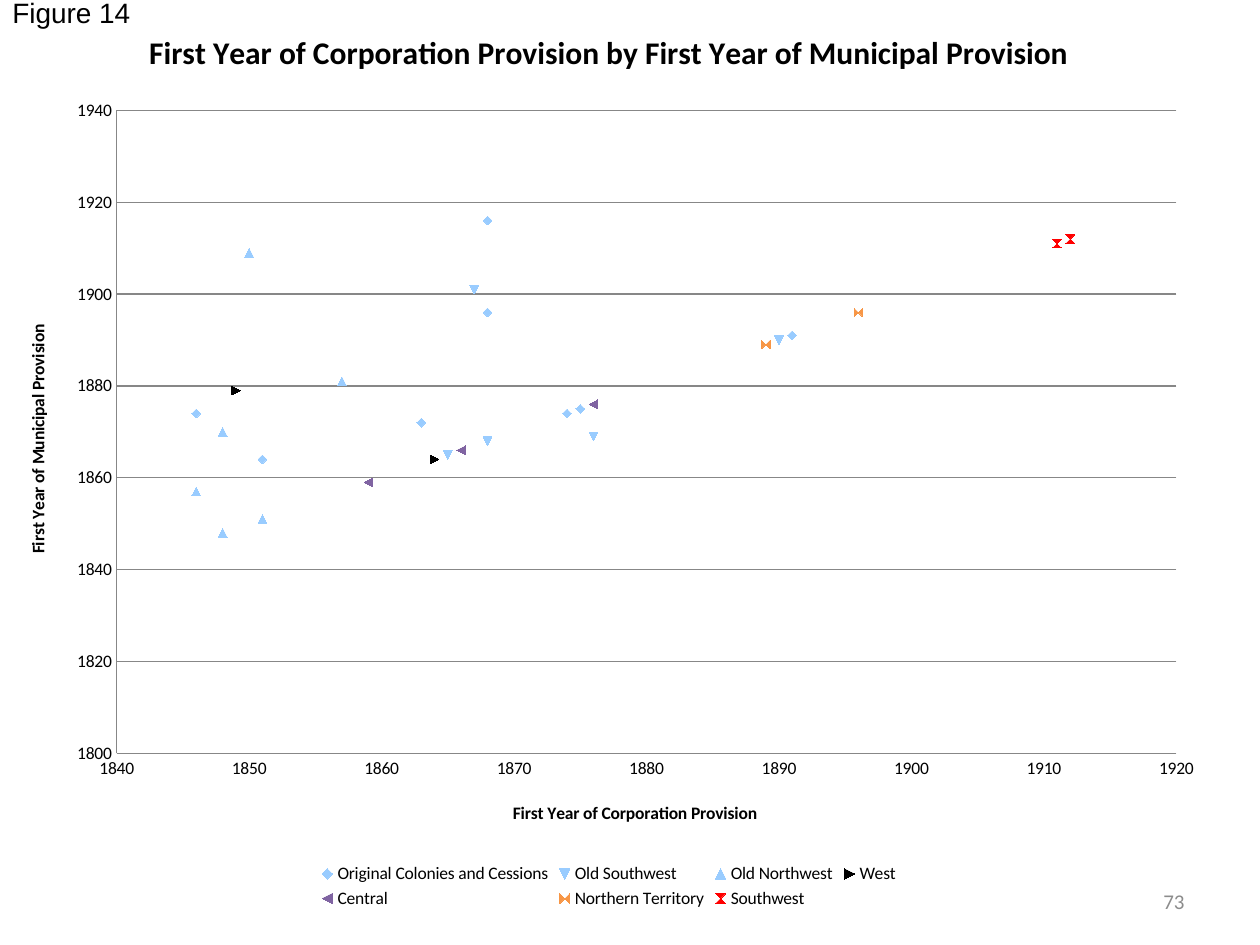
from dataclasses import dataclass
from typing import Any

from lxml.etree import SubElement
from pptx import Presentation
from pptx.chart.data import XyChartData
from pptx.dml.color import RGBColor
from pptx.enum.chart import (XL_CHART_TYPE, XL_LEGEND_POSITION,
                             XL_MARKER_STYLE, XL_TICK_MARK)
from pptx.enum.text import MSO_ANCHOR, PP_ALIGN
from pptx.oxml import parse_xml
from pptx.oxml.ns import nsdecls, qn
from pptx.util import Pt


@dataclass(frozen=True)
class Region:
    name: str
    color: str
    points: tuple[tuple[int | None, int | None], ...]


@dataclass(frozen=True)
class Label:
    text: str
    box: tuple[float, float, float, float]
    font: dict[str, Any]
    color: str
    align: PP_ALIGN
    frame: dict[str, Any]


@dataclass(frozen=True)
class AxisPlan:
    title: str
    title_spot: tuple[float, float]
    scale: dict[str, Any]


CHART_WIDTH, CHART_HEIGHT = 696, 522
LIGHT_BLUE = "99CCFF"
GRAY = "878787"
TICK_FONT = {"name": "Calibri", "size": Pt(10), "bold": False}
AXIS_TITLE_FONT = {**TICK_FONT, "bold": True}
TITLE_FONT = {"name": "Calibri", "size": Pt(18), "bold": True}

REGIONS = (
    Region("Original Colonies and Cessions", LIGHT_BLUE,
           ((1900, None), (1875, 1875), (1874, 1874), (None, None),
            (1860, None), (1851, 1864), (None, None), (None, None),
            (1846, 1874), (1868, 1896), (1868, 1916), (1890, None),
            (1891, 1891), (1870, None), (1863, 1872))),
    Region("Old Southwest", LIGHT_BLUE,
           ((1840, None), (1890, 1890), (1867, 1901), (1865, 1865),
            (1868, 1868), (None, 1860), (1876, 1869))),
    Region("Old Northwest", LIGHT_BLUE,
           ((1848, 1848), (1851, 1851), (1848, 1870), (1850, 1909),
            (1846, 1857), (1851, 1851), (1857, 1881))),
    Region("West", "000000", ((1849, 1879), (1860, None), (1864, 1864))),
    Region("Central", "8064A2", ((1859, 1859), (1866, 1866), (1876, 1876))),
    Region("Northern Territory", "F79646",
           ((1889, 1889),) * 6 + ((1896, 1896),)),
    Region("Southwest", "FF0000", ((None, 1910), (1911, 1911), (1912, 1912))),
)

LABELS = (
    Label("73", (516, 500.5, 168, 28.75),
          {"name": "Calibri", "size": Pt(12)}, "8C8C8C", PP_ALIGN.RIGHT,
          {"word_wrap": True, "vertical_anchor": MSO_ANCHOR.MIDDLE}),
    Label("Figure 14", (0, 0, 720, 36),
          {"name": "Arial", "size": Pt(16)}, "000000", PP_ALIGN.LEFT,
          {"word_wrap": True, "vertical_anchor": MSO_ANCHOR.MIDDLE,
           "margin_top": Pt(0), "margin_bottom": Pt(22.2)}),
)

X_PLAN = AxisPlan("First Year of Corporation Provision", (291.2, 456),
                  {"minimum_scale": 1840, "maximum_scale": 1920,
                   "major_unit": 10, "has_major_gridlines": False})
Y_PLAN = AxisPlan("First Year of Municipal Provision", (13.4, 183.7),
                  {"minimum_scale": 1800, "maximum_scale": 1940,
                   "major_unit": 20, "has_major_gridlines": True})


def apply(target: Any, values: dict[str, Any]) -> None:
    for name, value in values.items():
        setattr(target, name, value)


def paint(color_format: Any, color: str) -> None:
    color_format.rgb = RGBColor.from_string(color)


def style_font(font: Any, values: dict[str, Any], color: str = "000000") -> None:
    apply(font, values)
    paint(font.color, color)


def place(element: Any, index: int, inner: bool = False, **lengths: float) -> None:
    for old in element.findall(qn("c:layout")):
        element.remove(old)
    layout = parse_xml(f"<c:layout {nsdecls('c')}/>")
    manual = SubElement(layout, qn("c:manualLayout"))
    entries = {"layoutTarget": "inner"} if inner else {}
    entries |= {"xMode": "edge", "yMode": "edge"}
    for name, value in lengths.items():
        whole = CHART_WIDTH if name in "xw" else CHART_HEIGHT
        entries[name] = str(value / whole)
    for name, value in entries.items():
        SubElement(manual, qn(f"c:{name}")).set("val", value)
    element.insert(index, layout)


def write_title(title: Any, text: str, font: dict[str, Any],
                spot: tuple[float, float]) -> None:
    para = title.text_frame.paragraphs[0]
    span = para.add_run()
    span.text = text
    style_font(span.font, font)
    place(title._element, 1, x=spot[0], y=spot[1])


def style_axis(axis: Any, plan: AxisPlan) -> None:
    apply(axis, {**plan.scale, "major_tick_mark": XL_TICK_MARK.NONE,
                 "minor_tick_mark": XL_TICK_MARK.NONE})
    axis.tick_labels.number_format = "General"
    axis.tick_labels.number_format_is_linked = False
    style_font(axis.tick_labels.font, TICK_FONT)
    lines = [axis.format.line]
    if axis.has_major_gridlines:
        lines.append(axis.major_gridlines.format.line)
    for line in lines:
        line.width = Pt(0.75)
        paint(line.color, GRAY)
    write_title(axis.axis_title, plan.title, AXIS_TITLE_FONT, plan.title_spot)


def style_series(series: Any, region: Region) -> None:
    series.format.line.fill.background()
    marker = series.marker
    apply(marker, {"style": XL_MARKER_STYLE.AUTOMATIC, "size": 5})
    for fill in (marker.format.fill, marker.format.line.fill):
        fill.solid()
        paint(fill.fore_color, region.color)


def add_scatter(page: Any) -> None:
    data = XyChartData()
    for region in REGIONS:
        series = data.add_series(region.name)
        for corporation_year, municipal_year in region.points:
            series.add_data_point(corporation_year, municipal_year)
    chart = page.shapes.add_chart(XL_CHART_TYPE.XY_SCATTER, Pt(0), Pt(0),
                                  Pt(CHART_WIDTH), Pt(CHART_HEIGHT), data).chart
    style_font(chart.font, TICK_FONT)
    chart.plots[0].vary_by_categories = False
    for series, region in zip(chart.plots[0].series, REGIONS):
        style_series(series, region)
    write_title(chart.chart_title,
                "First Year of Corporation Provision by First Year of Municipal Provision",
                TITLE_FONT, (82, 14))
    style_axis(chart.category_axis, X_PLAN)
    style_axis(chart.value_axis, Y_PLAN)
    plot_area = chart.plots[0]._element.getparent()
    place(plot_area, 0, inner=True, x=66.7, y=63.1, w=605.5, h=367.5)
    chart.has_legend = True
    apply(chart.legend, {"position": XL_LEGEND_POSITION.BOTTOM,
                         "include_in_layout": False})
    style_font(chart.legend.font, TICK_FONT)


def add_label(page: Any, label: Label) -> None:
    box = page.shapes.add_textbox(*map(Pt, label.box))
    apply(box.text_frame, label.frame)
    para = box.text_frame.paragraphs[0]
    para.alignment = label.align
    span = para.add_run()
    span.text = label.text
    style_font(span.font, label.font, label.color)


def main() -> None:
    deck = Presentation()
    apply(deck, {"slide_width": Pt(720), "slide_height": Pt(540)})
    page = deck.slides.add_slide(deck.slide_layouts[6])
    for label in LABELS:
        add_label(page, label)
    add_scatter(page)
    deck.save("out.pptx")


if __name__ == "__main__":
    main()
